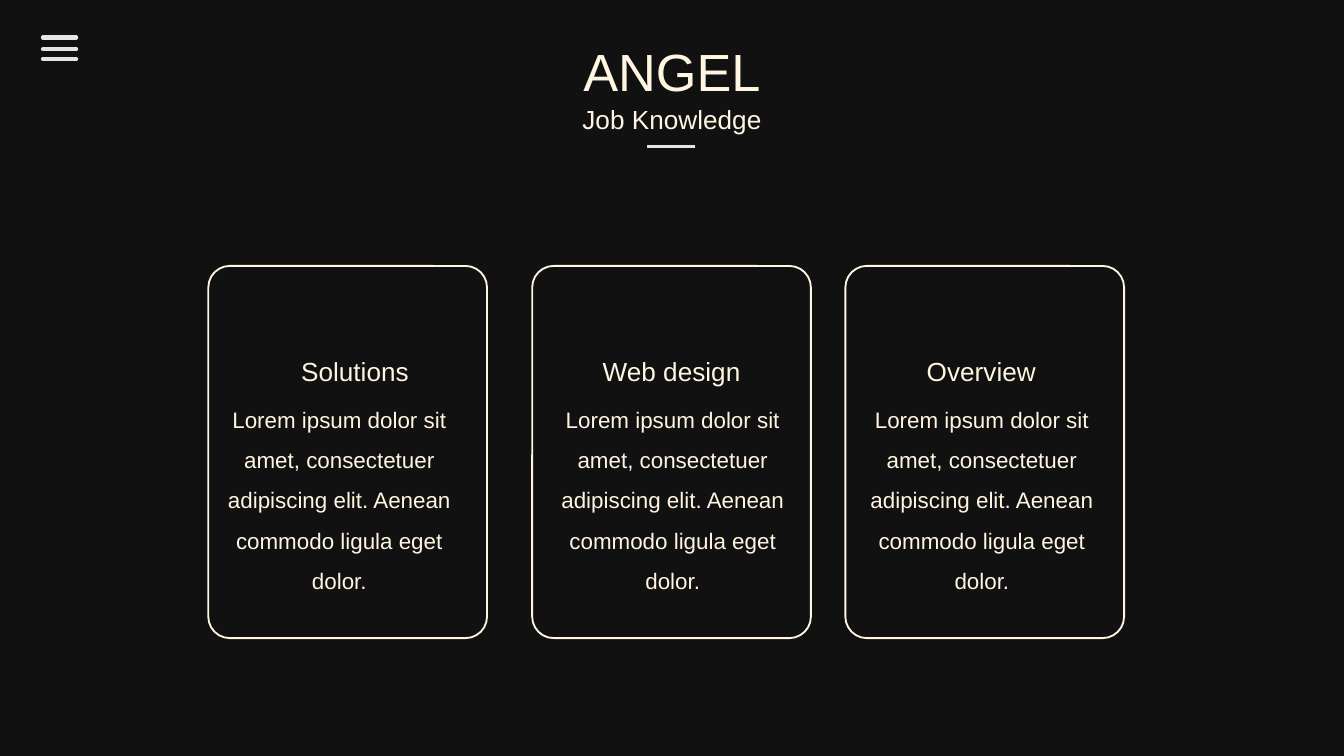
"""Build the dark Job Knowledge slide with three outlined cards."""
import pptx
import pptx.dml.color
import pptx.enum.shapes
import pptx.enum.text
import pptx.oxml.ns
import pptx.util
from lxml import etree

Pt = pptx.util.Pt

THEME = {
    "font": "Arial", "background": "111111", "cream": "FFF5E1", "grey": "E7E6E6",
    "title": 28, "heading": 14, "body": 12,
}
HEADER = [("ANGEL", "title", 17.3, 41), ("Job Knowledge", "heading", 51.8, 24.5)]
BODY = "Lorem ipsum dolor sit amet, consectetuer adipiscing elit. Aenean commodo ligula eget dolor."
CARDS = [
    {"heading": "Solutions", "left": 111.6, "heading_center": 190.2, "body_left": 111.6},
    {"heading": "Web design", "left": 285.1, "heading_center": 359.8, "body_left": 290.2},
    {"heading": "Overview", "left": 452.9, "heading_center": 525.7, "body_left": 455.8},
]
MENU_ROWS = [20.1, 26.3, 31.6]
SLIDE_W, SLIDE_H = 720, 405
CARD_TOP, CARD_W, CARD_H = 142.5, 149.3, 199.4
HEADING_TOP, HEADING_W, HEADING_H = 186.7, 120, 24.5
BODY_TOP, BODY_W, BODY_H = 206.6, 140.4, 116.6


def color(name):
    return pptx.dml.color.RGBColor.from_string(THEME[name])


def add_text(s, text, size, left, top, width, height, spacing=1.0):
    tf = s.shapes.add_textbox(Pt(left), Pt(top), Pt(width), Pt(height)).text_frame
    tf.word_wrap = True
    p = tf.paragraphs[0]
    p.alignment = pptx.enum.text.PP_ALIGN.CENTER
    p.line_spacing = spacing
    r = p.add_run()
    r.text = text
    for key, value in {"name": THEME["font"], "size": Pt(THEME[size])}.items():
        setattr(r.font, key, value)
    r.font.color.rgb = color("cream")


def add_line(shapes, left, right, y, width, cap="flat"):
    line = shapes.add_connector(
        pptx.enum.shapes.MSO_CONNECTOR.STRAIGHT, Pt(left), Pt(y), Pt(right), Pt(y))
    line.line.color.rgb = color("grey")
    line.line.width = Pt(width)
    line.line._get_or_add_ln().set("cap", cap)
    etree.SubElement(line._element.spPr, pptx.oxml.ns.qn("a:effectLst"))


def add_card(s, card):
    sp = s.shapes.add_shape(
        pptx.enum.shapes.MSO_SHAPE.ROUNDED_RECTANGLE,
        Pt(card["left"]), Pt(CARD_TOP), Pt(CARD_W), Pt(CARD_H))
    sp.adjustments[0] = 0.077
    sp.shadow.inherit = False
    sp.fill.background()
    sp.line.color.rgb = color("cream")
    sp.line.width = Pt(1)
    add_text(s, card["heading"], "heading", card["heading_center"] - HEADING_W / 2,
             HEADING_TOP, HEADING_W, HEADING_H)
    add_text(s, BODY, "body", card["body_left"], BODY_TOP, BODY_W, BODY_H, 1.5)


def main():
    prs = pptx.Presentation()
    prs.slide_width, prs.slide_height = Pt(SLIDE_W), Pt(SLIDE_H)
    s = prs.slides.add_slide(prs.slide_layouts[6])
    s.background.fill.solid()
    s.background.fill.fore_color.rgb = color("background")
    for text, size, top, height in HEADER:
        add_text(s, text, size, (SLIDE_W - 160) / 2, top, 160, height)
    add_line(s.shapes, 346.8, 372.2, 78.6, 1.5)
    menu = s.shapes.add_group_shape()
    for y in MENU_ROWS:
        add_line(menu.shapes, 23, 40.8, y, 2.25, "rnd")
    for card in CARDS:
        add_card(s, card)
    prs.save("out.pptx")


if __name__ == "__main__":
    main()
